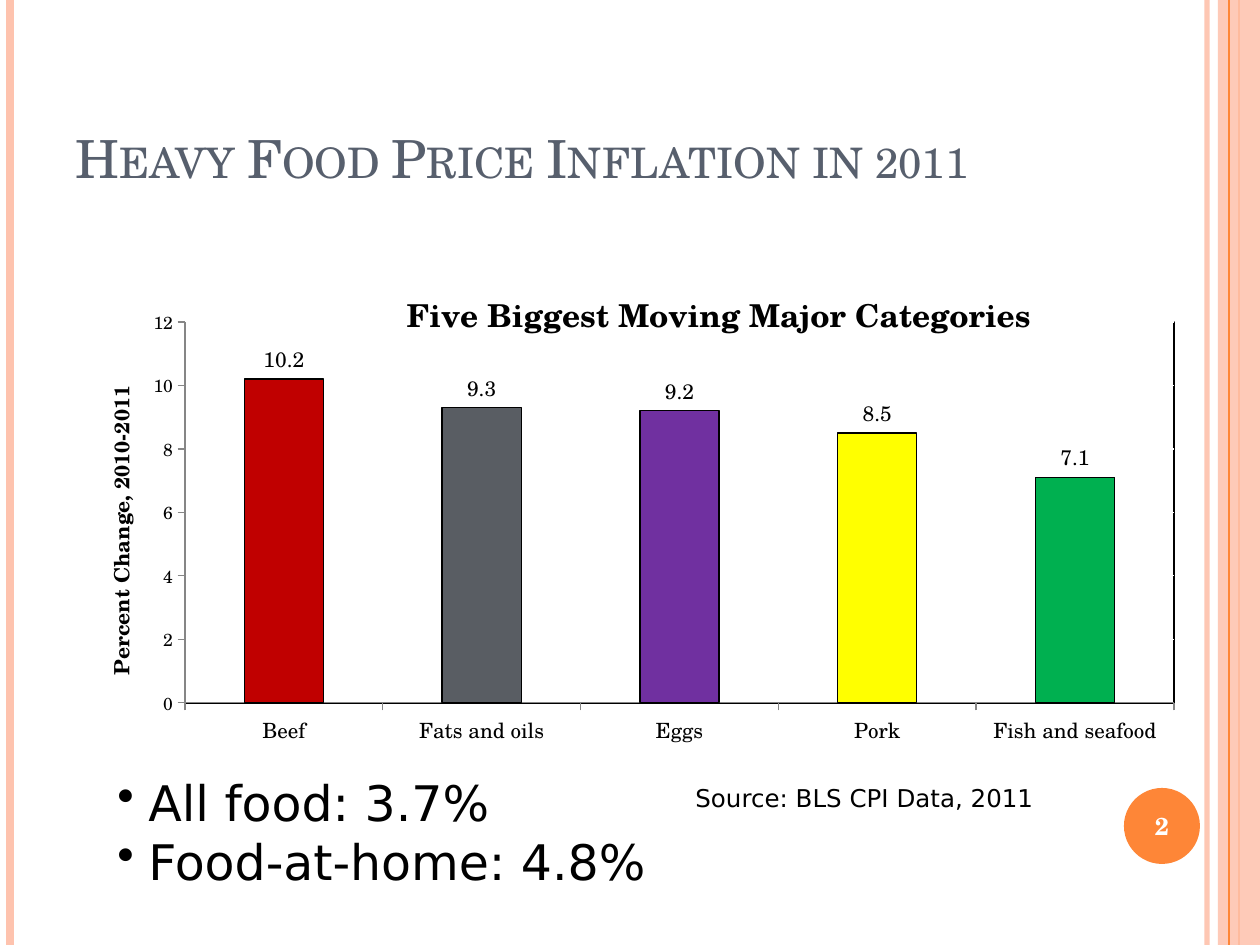
from dataclasses import dataclass
from typing import Optional

from pptx import Presentation
from pptx import util as u
from pptx.chart.data import CategoryChartData
from pptx.dml.color import RGBColor
from pptx.enum import chart as ch, shapes, text
from pptx.oxml import parse_xml
from pptx.oxml.ns import nsdecls, qn

SCALE = u.Inches(1) / 126  # EMU in one px
WIDE, HIGH = 1260, 945


@dataclass(frozen=True)
class Theme:
    serif: str = "TeX Gyre Schola"
    sans: str = "DejaVu Sans"
    black: str = "000000"
    white: str = "FFFFFF"
    slate: str = "575F6D"
    pale: str = "FEC3AE"
    orange: str = "FE8637"
    axis: str = "868686"
    title: int = 30
    list: int = 28
    head: int = 18
    note: int = 14
    label: int = 12
    tick: int = 10


@dataclass(frozen=True)
class Box:
    left: int
    top: int
    width: int
    height: int


@dataclass(frozen=True)
class Stripe:
    x: int
    color: str
    weight: float
    alpha: Optional[int] = None


@dataclass(frozen=True)
class Label:
    box: Box
    lines: tuple
    size: int
    font: str
    color: str
    bold: bool = False
    caps: bool = False
    bullet: bool = False
    align: text.PP_ALIGN = text.PP_ALIGN.LEFT
    anchor: text.MSO_ANCHOR = text.MSO_ANCHOR.TOP


@dataclass(frozen=True)
class Bar:
    name: str
    value: float
    color: str


T = Theme()
BACK = (Stripe(1207, T.pale, 3, 93), Stripe(10, T.pale, 4.5),
        Stripe(1239, T.orange, 1.5))
FRONT = (Stripe(1229, T.orange, 0.75),)
BAND = Box(1218, 0, 42, HIGH)
BADGE = Box(1124, 788, 76, 76)
CHART = Box(63, 220, 1134, 536)
PLOT = Box(185, 322, 989, 381)
BARS = (
    Bar("Beef", 10.2, "C00000"),
    Bar("Fats and oils", 9.3, "595D63"),
    Bar("Eggs", 9.2, "7030A0"),
    Bar("Pork", 8.5, "FFFF00"),
    Bar("Fish and seafood", 7.1, "00B050"),
)
LABELS = (
    Label(Box(63, 38, 1029, 157), ("Heavy Food Price Inflation in 2011",),
          T.title, T.serif, T.slate, caps=True, anchor=text.MSO_ANCHOR.BOTTOM),
    Label(Box(1120, 790, 84, 72), ("2",), T.note, T.serif, T.white, bold=True,
          align=text.PP_ALIGN.CENTER, anchor=text.MSO_ANCHOR.MIDDLE),
    Label(Box(105, 766, 1050, 131), ("All food: 3.7%", "Food-at-home: 4.8%"),
          T.list, T.sans, T.black, bullet=True),
    Label(Box(683, 777, 462, 43), ("Source: BLS CPI Data, 2011",),
          T.note, T.sans, T.black),
)


def px(n: int) -> int:
    return round(n * SCALE)


def spot(box: Box) -> tuple:
    return px(box.left), px(box.top), px(box.width), px(box.height)


def rgb(code: str) -> RGBColor:
    return RGBColor.from_string(code)


def fade(fill, alpha: int) -> None:
    """Set the opacity of a solid fill, in percent."""
    tone = fill.find(".//" + qn("a:srgbClr"))
    tone.append(parse_xml(f'<a:alpha {nsdecls("a")} val="{alpha * 1000}"/>'))


def pen(line, color: str, weight: float = 0.75) -> None:
    line.color.rgb = rgb(color)
    line.width = u.Pt(weight)


def style(font, size: int, color: str = T.black, bold: bool = False,
          face: str = T.serif) -> None:
    font.name, font.size, font.bold = face, u.Pt(size), bold
    font.color.rgb = rgb(color)


def add_stripe(slide, item: Stripe) -> None:
    x = px(item.x)
    line = slide.shapes.add_connector(
        shapes.MSO_CONNECTOR.STRAIGHT, x, 0, x, px(HIGH))
    pen(line.line, item.color, item.weight)
    props = line._element.spPr
    if item.alpha:
        fade(props, item.alpha)
    props.append(parse_xml(f'<a:effectLst {nsdecls("a")}/>'))


def add_solid(slide, kind, box: Box, color: str, alpha: int = 100) -> None:
    shape = slide.shapes.add_shape(kind, *spot(box))
    shape.shadow.inherit = False
    shape.fill.solid()
    shape.fill.fore_color.rgb = rgb(color)
    shape.line.fill.background()
    if alpha < 100:
        fade(shape._element.spPr, alpha)


def add_label(slide, item: Label) -> None:
    frame = slide.shapes.add_textbox(*spot(item.box)).text_frame
    frame.word_wrap = True
    frame.vertical_anchor = item.anchor
    for i, line in enumerate(item.lines):
        para = frame.add_paragraph() if i else frame.paragraphs[0]
        para.alignment = item.align
        run = para.add_run()
        run.text = line
        style(run.font, item.size, item.color, item.bold, item.font)
        if item.caps:
            run.font._element.set("cap", "small")
        if item.bullet:
            props = para._p.get_or_add_pPr()
            props.set("marL", str(px(31)))
            props.set("indent", str(-px(31)))
            props.append(parse_xml(f'<a:buChar {nsdecls("a")} char="•"/>'))


def place(part, index: int, left: int, top: int, size: str = "") -> None:
    """Fix a chart part at a px point of the slide."""
    for old in part.findall(qn("c:layout")):
        part.remove(old)
    x, y = (left - CHART.left) / CHART.width, (top - CHART.top) / CHART.height
    part.insert(index, parse_xml(
        f'<c:layout {nsdecls("c")}><c:manualLayout>'
        + ('<c:layoutTarget val="inner"/>' if size else "")
        + '<c:xMode val="edge"/><c:yMode val="edge"/>'
        f'<c:x val="{x:.4f}"/><c:y val="{y:.4f}"/>{size}'
        '</c:manualLayout></c:layout>'))


def add_title(owner, words: str, size: int, left: int, top: int) -> None:
    title = owner.chart_title if hasattr(owner, "chart_title") else owner.axis_title
    run = title.text_frame.paragraphs[0].add_run()
    run.text = words
    style(run.font, size, bold=True)
    place(title._element, 1, left, top)


def add_bars(slide) -> None:
    data = CategoryChartData()
    data.categories = [bar.name for bar in BARS]
    data.add_series("Series 1", [bar.value for bar in BARS])
    chart = slide.shapes.add_chart(
        ch.XL_CHART_TYPE.COLUMN_CLUSTERED, *spot(CHART), data).chart
    chart.has_legend = False
    style(chart.font, T.tick)

    # Titles
    add_title(chart, " Five Biggest Moving Major Categories", T.head, 392, 281)
    chart.chart_title.include_in_layout = True
    chart._chartSpace.find(".//" + qn("c:title")).find(qn("c:overlay")).set("val", "1")
    add_title(chart.value_axis, "Percent Change, 2010-2011", T.label, 98, 382)

    # Axes
    cats, vals = chart.category_axis, chart.value_axis
    for axis, size in ((cats, T.label), (vals, T.tick)):
        style(axis.tick_labels.font, size)
        axis.major_tick_mark = ch.XL_TICK_MARK.OUTSIDE
        pen(axis.format.line, T.axis)
    vals.minimum_scale, vals.maximum_scale, vals.major_unit = 0, 12, 2
    pen(vals.major_gridlines.format.line, T.white)

    # Bars and their values
    plot = chart.plots[0]
    plot.gap_width, plot.vary_by_categories = 150, False
    row = plot.series[0]
    for i, bar in enumerate(BARS):
        form = row.points[i].format
        form.fill.solid()
        form.fill.fore_color.rgb = rgb(bar.color)
        pen(form.line, T.black)
    tags = row.data_labels
    tags.show_value = True
    tags.position = ch.XL_LABEL_POSITION.OUTSIDE_END
    style(tags.font, T.label)

    # Framed plot area
    area = chart._chartSpace.find(".//" + qn("c:plotArea"))
    w, h = PLOT.width / CHART.width, PLOT.height / CHART.height
    place(area, 0, PLOT.left, PLOT.top,
          f'<c:w val="{w:.4f}"/><c:h val="{h:.4f}"/>')
    area.append(parse_xml(
        f'<c:spPr {nsdecls("c", "a")}><a:noFill/><a:ln w="{u.Pt(0.75)}"><a:solidFill>'
        f'<a:srgbClr val="{T.black}"/></a:solidFill></a:ln></c:spPr>'))


def main() -> None:
    deck = Presentation()
    deck.slide_width, deck.slide_height = px(WIDE), px(HIGH)
    slide = deck.slides.add_slide(deck.slide_layouts[6])
    # Side decoration
    for item in BACK:
        add_stripe(slide, item)
    add_solid(slide, shapes.MSO_SHAPE.RECTANGLE, BAND, T.pale, 87)
    for item in FRONT:
        add_stripe(slide, item)
    add_solid(slide, shapes.MSO_SHAPE.OVAL, BADGE, T.orange)
    # Content
    add_bars(slide)
    for item in LABELS:
        add_label(slide, item)
    deck.save("out.pptx")


if __name__ == "__main__":
    main()
